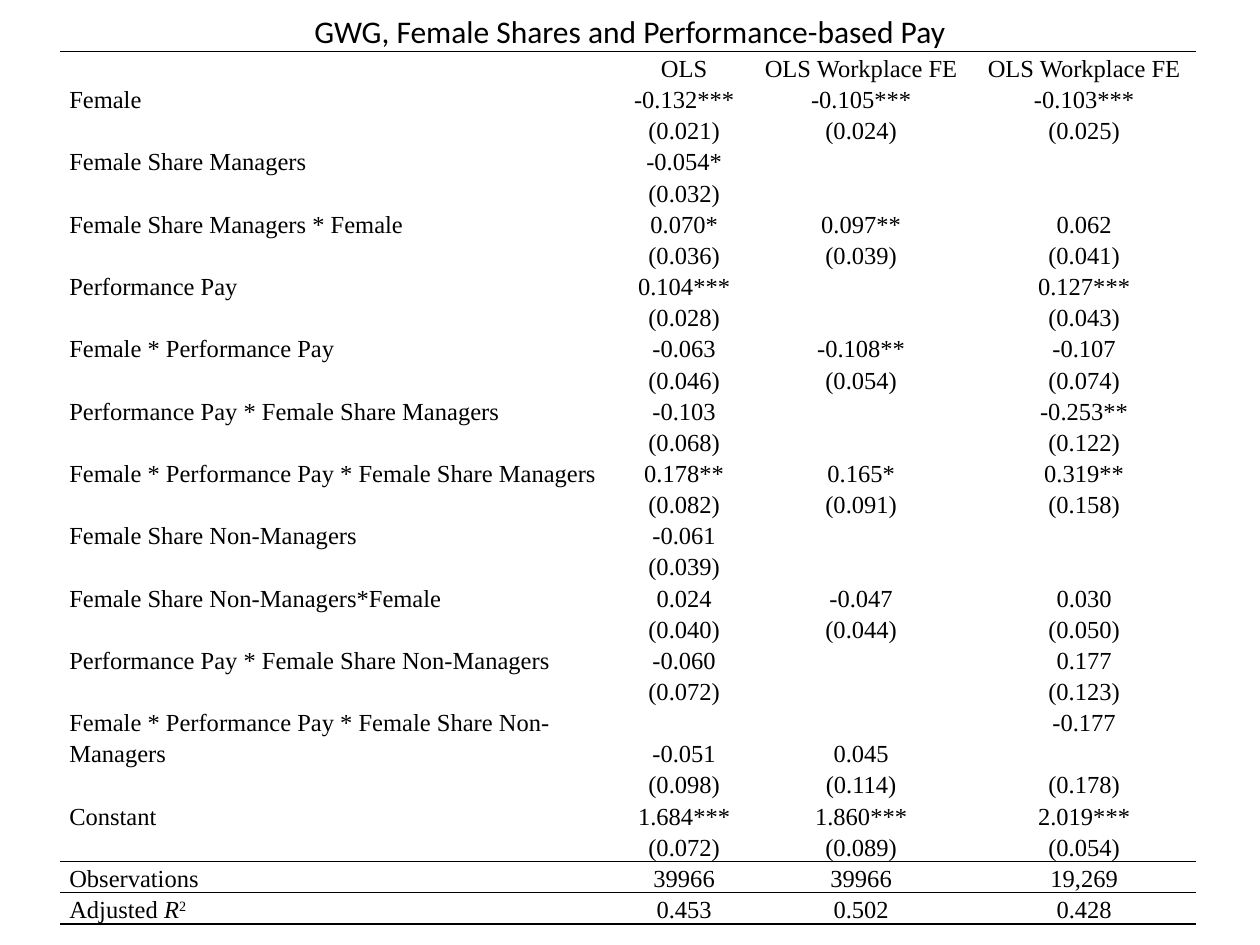
from pptx import Presentation
from pptx.dml.color import RGBColor
from pptx.enum.text import MSO_ANCHOR, MSO_AUTO_SIZE, PP_ALIGN
from pptx.oxml import parse_xml
from pptx.oxml.ns import nsdecls
from pptx.util import Inches, Pt

BLACK = "000000"
TITLE = "GWG, Female Shares and Performance-based Pay"
MODELS = ["OLS", "OLS Workplace FE", "OLS Workplace FE"]

# Label, then coefficient and standard error for each model
ESTIMATES = [
    ("Female", "-0.132*** (0.021)", "-0.105*** (0.024)", "-0.103*** (0.025)"),
    ("Female Share Managers", "-0.054* (0.032)", "", ""),
    ("Female Share Managers * Female",
     "0.070* (0.036)", "0.097** (0.039)", "0.062 (0.041)"),
    ("Performance Pay", "0.104*** (0.028)", "", "0.127*** (0.043)"),
    ("Female * Performance Pay",
     "-0.063 (0.046)", "-0.108** (0.054)", "-0.107 (0.074)"),
    ("Performance Pay * Female Share Managers",
     "-0.103 (0.068)", "", "-0.253** (0.122)"),
    ("Female * Performance Pay * Female Share Managers",
     "0.178** (0.082)", "0.165* (0.091)", "0.319** (0.158)"),
    ("Female Share Non-Managers", "-0.061 (0.039)", "", ""),
    ("Female Share Non-Managers*Female",
     "0.024 (0.040)", "-0.047 (0.044)", "0.030 (0.050)"),
    ("Performance Pay * Female Share Non-Managers",
     "-0.060 (0.072)", "", "0.177 (0.123)"),
    ("Female * Performance Pay * Female Share Non-Managers",
     "-0.051 (0.098)", "0.045 (0.114)", "-0.177 (0.178)"),
    ("Constant", "1.684*** (0.072)", "1.860*** (0.089)", "2.019*** (0.054)"),
]
SUMMARY = [
    ["Observations", "39966", "39966", "19,269"],
    ["Adjusted R2", "0.453", "0.502", "0.428"],
]


def color(hex_string):
    return RGBColor.from_string(hex_string)


def regression_rows():
    """Each estimate gives a row of coefficients and a row of errors."""
    rows = [["", *MODELS]]
    for label, *estimates in ESTIMATES:
        pairs = [estimate.split() or ["", ""] for estimate in estimates]
        rows.append([label, *(pair[0] for pair in pairs)])
        rows.append(["", *(pair[1] for pair in pairs)])
    return rows + SUMMARY


class SlideBuilder:
    title_font, title_size = "Calibri", 18
    table_font, table_size = "Times New Roman", 14
    no_grid_style = "{2D5ABB26-0587-4C30-8999-92F81FD0307C}"

    def __init__(self, presentation):
        self.slide = presentation.slides.add_slide(presentation.slide_layouts[5])

    def style_font(self, font, name, size):
        font.name, font.size = name, Pt(size)
        font.color.rgb = color(BLACK)

    def title(self, text, left, top, width, height):
        shape = self.slide.shapes.title
        shape.left, shape.top = Inches(left), Inches(top)
        shape.width, shape.height = Inches(width), Inches(height)
        frame = shape.text_frame
        frame.text = text
        frame.auto_size = MSO_AUTO_SIZE.NONE
        frame.vertical_anchor = MSO_ANCHOR.MIDDLE
        paragraph = frame.paragraphs[0]
        paragraph.alignment = PP_ALIGN.CENTER
        self.style_font(paragraph.font, self.title_font, self.title_size)

    def table(self, rows, left, top, widths, heights):
        shape = self.slide.shapes.add_table(
            len(rows), len(widths), Inches(left), Inches(top),
            Inches(sum(widths)), Inches(sum(heights)))
        table = shape.table
        table.first_row = table.horz_banding = False
        table._tbl.tblPr.find("{*}tableStyleId").text = self.no_grid_style
        for column, width in zip(table.columns, widths):
            column.width = Inches(width)
        for row, height in zip(table.rows, heights):
            row.height = Inches(height)
        for row_index, row in enumerate(rows):
            for column_index, text in enumerate(row):
                self.cell(table.cell(row_index, column_index), text, column_index)
        return table

    def cell(self, cell, text, column_index):
        cell.fill.background()
        cell.margin_left = cell.margin_right = Inches(0.07)
        cell.margin_top = cell.margin_bottom = 0
        cell.vertical_anchor = MSO_ANCHOR.TOP if column_index == 3 else MSO_ANCHOR.BOTTOM
        paragraph = cell.text_frame.paragraphs[0]
        paragraph.line_spacing = 1.15
        paragraph.alignment = PP_ALIGN.CENTER if column_index else PP_ALIGN.LEFT
        self.style_font(paragraph.font, self.table_font, self.table_size)
        if text:
            paragraph.add_run().text = text
        else:
            # Empty cells need the table's text size so that rows stay low
            paragraph._p.append(parse_xml(
                f'<a:endParaRPr {nsdecls("a")} sz="{self.table_size * 100}">'
                f'<a:latin typeface="{self.table_font}"/></a:endParaRPr>'))

    def rule(self, table, row_index, side):
        """Draw a line along the top (T) or bottom (B) of a row."""
        for cell in table.rows[row_index].cells:
            cell._tc.get_or_add_tcPr().insert(0, parse_xml(
                f'<a:ln{side} {nsdecls("a")} w="{Pt(1)}"><a:solidFill>'
                f'<a:srgbClr val="{BLACK}"/></a:solidFill></a:ln{side}>'))

    def r_squared(self, cell):
        paragraph = cell.text_frame.paragraphs[0]
        paragraph.runs[0].text = "Adjusted "
        symbol, exponent = paragraph.add_run(), paragraph.add_run()
        symbol.text, exponent.text = "R", "2"
        symbol.font.italic = True
        exponent.font._element.set("baseline", "30000")


def main():
    presentation = Presentation()
    presentation.slide_width, presentation.slide_height = Inches(10), Inches(7.5)
    builder = SlideBuilder(presentation)

    # Title
    builder.title(TITLE, 0.5, 0.08, 9, 0.33)

    # Regression table: rows with a label are slightly taller
    rows = regression_rows()
    heights = [0.23 if 1 < index < 25 and index % 2 == 0 else 0.21
               for index in range(len(rows))]
    table = builder.table(rows, 0.48, 0.41, [4.43, 1.04, 1.77, 1.77], heights)
    last = len(rows) - 1
    builder.r_squared(table.cell(last, 0))

    # Rules above the header, around the summary
    for row_index, side in [(0, "T"), (last - 2, "B"), (last - 1, "T"), (last, "B")]:
        builder.rule(table, row_index, side)

    presentation.save("out.pptx")


if __name__ == "__main__":
    main()
